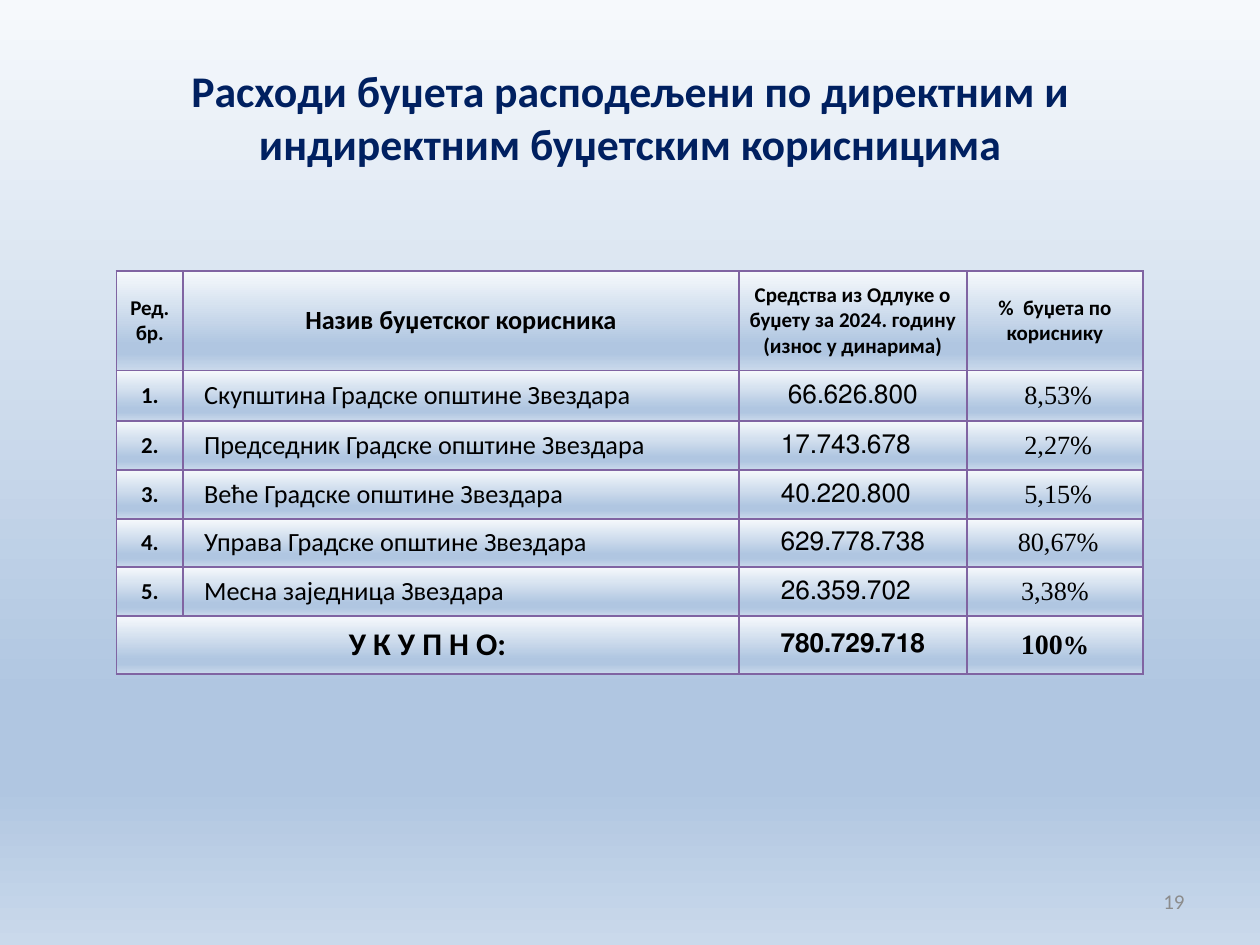
"""Build the slide on budget spending by beneficiary."""
from lxml import etree
from pptx import Presentation
from pptx import util as u
from pptx.dml import color
from pptx.enum import text
from pptx.oxml import ns

COLORS = {"navy": "002060", "black": "000000", "grey": "8C8C8C", "border": "8064A2",
          "light": "F6F9FC", "blue": "B0C6E1", "pale": "CAD9EB"}
STOPS = [(0, "light"), (74, "blue"), (83, "blue"), (100, "pale")]
CENTER, LEFT, RIGHT = text.PP_ALIGN.CENTER, text.PP_ALIGN.LEFT, text.PP_ALIGN.RIGHT
SERIF = "Times New Roman"
COLUMNS = [38.2, 317.5, 130.3, 100.8]
ROWS = [56.9, 28.8, 28, 28, 27.6, 28, 33.1]
HEADINGS = [("Ред. бр.", 12), ("Назив буџетског корисника", 15),
            ("Средства из Одлуке о буџету за 2024. годину \n(износ у динарима)", 12),
            ("%  буџета по кориснику", 12)]
BENEFICIARIES = [
    ("Скупштина Градске општине Звездара", "66.626.800", " 8,53%", 0),
    ("Председник Градске општине Звездара", "17.743.678", " 2,27%", 8),
    ("Веће Градске општине Звездара", "40.220.800", " 5,15%", 8),
    ("Управа Градске општине Звездара", "629.778.738", " 80,67%", 0),
    ("Месна заједница Звездара", "26.359.702", "3,38%", 8),
]


class Builder:
    """Hold the style and the current slide."""

    def __init__(self, page):
        self.page = page
        self.font = "Calibri"

    def place(self, shape, left, top, width, height):
        shape.left, shape.top = u.Pt(left), u.Pt(top)
        shape.width, shape.height = u.Pt(width), u.Pt(height)

    def gradient(self, fill, element):
        fill.gradient()
        fill.gradient_angle = 270
        stops = next(element.iter(ns.qn("a:gsLst")))
        for stop in list(stops):
            stops.remove(stop)
        for position, name in STOPS:
            stop = etree.SubElement(stops, ns.qn("a:gs"), pos=str(position * 1000))
            etree.SubElement(stop, ns.qn("a:srgbClr"), val=COLORS[name])

    def background(self):
        self.gradient(self.page.background.fill, self.page._element)

    def set_text(self, frame, words, size, shade="black", bold=False, align=CENTER, font=None):
        frame.text = words
        for para in frame.paragraphs:
            para.alignment = align
            para.font.name = font or self.font
            para.font.size = u.Pt(size)
            para.font.bold = bold
            para.font.color.rgb = color.RGBColor.from_string(COLORS[shade])

    def title(self, words, *area):
        box = self.page.shapes.title
        self.place(box, *area)
        box.text_frame.vertical_anchor = text.MSO_ANCHOR.MIDDLE
        self.set_text(box.text_frame, words, 25, "navy", True)

    def number(self, words, *area):
        box = self.page.shapes.add_textbox(*map(u.Pt, area))
        box.text_frame.word_wrap = True
        box.text_frame.vertical_anchor = text.MSO_ANCHOR.MIDDLE
        self.set_text(box.text_frame, words, 12, "grey", align=RIGHT)

    def table(self, left, top, columns, rows):
        area = (left, top, sum(columns), sum(rows))
        frame = self.page.shapes.add_table(len(rows), len(columns), *map(u.Pt, area))
        grid = frame.table
        grid.first_row = grid.horz_banding = False
        for column, width in zip(grid.columns, columns):
            column.width = u.Pt(width)
        for row, height in zip(grid.rows, rows):
            row.height = u.Pt(height)
        for cell in grid.iter_cells():
            self.style_cell(cell)
        return grid

    def style_cell(self, cell):
        cell.vertical_anchor = text.MSO_ANCHOR.MIDDLE
        cell.margin_left = cell.margin_right = u.Pt(5)
        cell.margin_top = cell.margin_bottom = 0
        self.gradient(cell.fill, cell._tc)
        properties = cell._tc.get_or_add_tcPr()
        for index, side in enumerate(("lnL", "lnR", "lnT", "lnB")):
            line = etree.Element(ns.qn(f"a:{side}"), w=str(u.Pt(1)))
            fill = etree.SubElement(line, ns.qn("a:solidFill"))
            etree.SubElement(fill, ns.qn("a:srgbClr"), val=COLORS["border"])
            properties.insert(index, line)

    def amount(self, cell, words, bold=False, shift=0):
        self.set_text(cell.text_frame, words, 15, bold=bold, font=SERIF)
        cell.margin_right = u.Pt(5 + shift)
        cell.text_frame.paragraphs[0]._p.get_or_add_pPr().set("rtl", "1")

    def mixed(self, cell, spans, font=None):
        self.set_text(cell.text_frame, "", 15, bold=True, font=font)
        for words, size in spans:
            span = cell.text_frame.paragraphs[0].add_run()
            span.text = words
            span.font.size = u.Pt(size)


def main():
    deck = Presentation()
    deck.slide_width, deck.slide_height = u.Pt(720), u.Pt(540)
    builder = Builder(deck.slides.add_slide(deck.slide_layouts[5]))
    builder.background()
    builder.title("Расходи буџета расподељени по директним и индиректним "
                  "буџетским корисницима", 36, 21.6, 648, 90)

    grid = builder.table(66.5, 154.8, COLUMNS, ROWS)
    for column, (words, size) in enumerate(HEADINGS):
        builder.set_text(grid.cell(0, column).text_frame, words, size, bold=True)
    for row, (name, amount, share, shift) in enumerate(BENEFICIARIES, 1):
        order, label, money, percent = (grid.cell(row, column) for column in range(4))
        builder.set_text(order.text_frame, f"{row}.", 13, bold=True)
        builder.set_text(label.text_frame, name, 15, align=LEFT)
        label.margin_left = u.Pt(12)
        builder.amount(money, amount, shift=shift)
        builder.set_text(percent.text_frame, share, 15, font=SERIF)

    last = len(ROWS) - 1
    grid.cell(last, 0).merge(grid.cell(last, 1))
    builder.mixed(grid.cell(last, 0), [("У К У П Н О:", 18)])
    builder.amount(grid.cell(last, 2), "780.729.718", bold=True)
    builder.mixed(grid.cell(last, 3), [("100", 16), ("%", 15)], SERIF)

    builder.number("19", 516.2, 500.4, 167.8, 28.8)
    deck.save("out.pptx")


if __name__ == "__main__":
    main()
